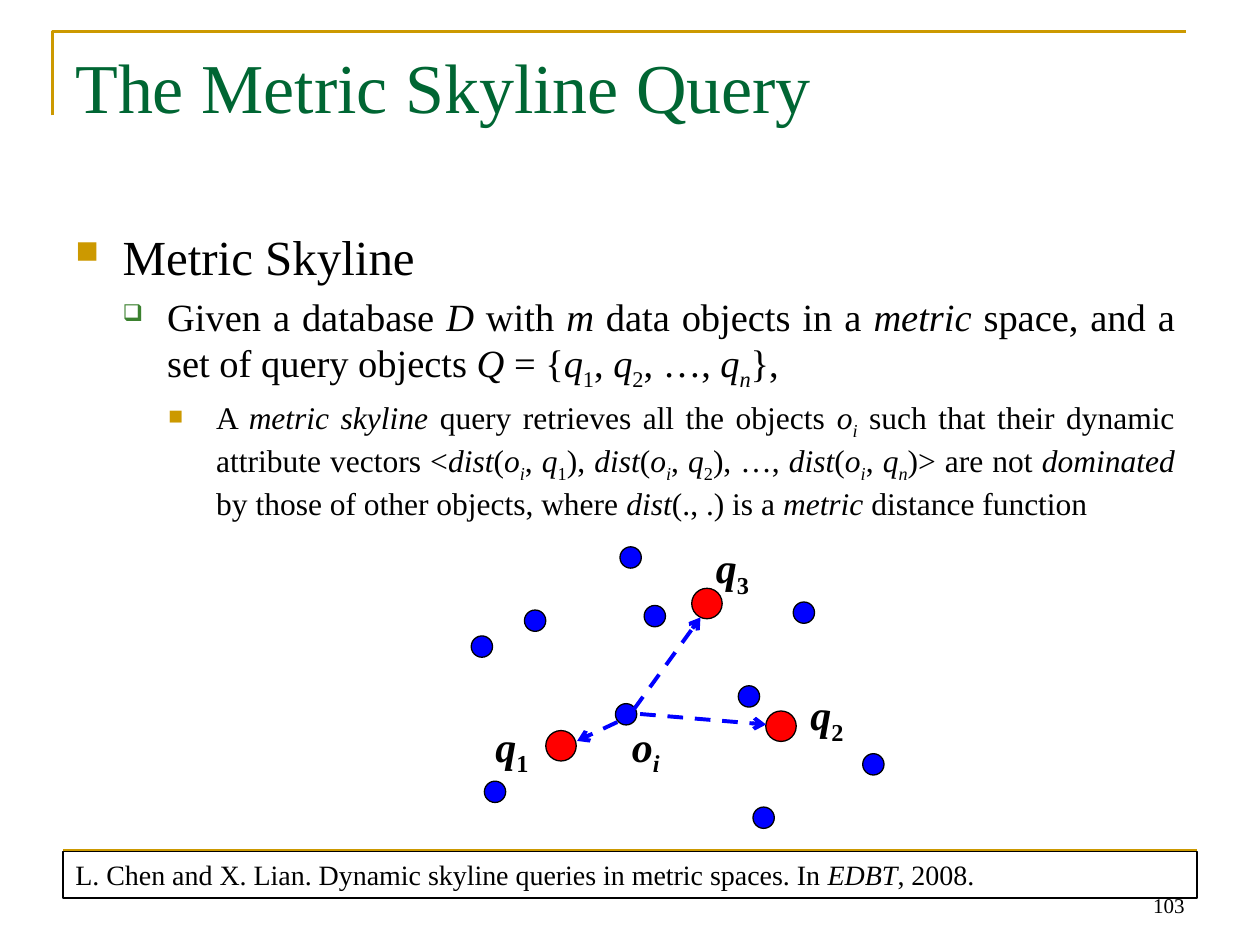
from lxml import etree
from pptx import Presentation
from pptx.dml.color import RGBColor
from pptx.enum.dml import MSO_LINE
from pptx.enum.shapes import MSO_CONNECTOR, MSO_SHAPE
from pptx.enum.text import MSO_ANCHOR, PP_ALIGN
from pptx.oxml.ns import qn
from pptx.util import Pt

FONT = "Times New Roman"
BLACK = RGBColor(0x00, 0x00, 0x00)
GOLD = RGBColor(0xCC, 0x99, 0x00)
TITLE_GREEN = RGBColor(0x00, 0x66, 0x33)
BULLET_GREEN = RGBColor(0x3B, 0x81, 0x2F)
BLUE = RGBColor(0x00, 0x00, 0xFF)
RED = RGBColor(0xFF, 0x00, 0x00)

# Body levels: size, left margin, indent, bullet, bullet colour, bullet size in percent
LEVELS = [
    (28, 27, -27, "■", GOLD, 65),
    (22, 52.5, -25.5, "❑", BULLET_GREEN, 60),
    (18, 80.5, -27.5, "■", GOLD, 65),
]
# In the wording, *...* is italic and _ lowers the next character
BODY = [
    "Metric Skyline",
    "Given a database *D* with *m* data objects in a *metric* space, and a set of "
    "query objects *Q* = {*q*_1, *q*_2, …, *q_n*}, ",
    "A *metric skyline *query retrieves all the objects *o_i* such that their dynamic "
    "attribute vectors <*dist*(*o_i*, *q*_1), *dist*(*o_i*, *q*_2), …, "
    "*dist*(*o_i*, *q_n*)> are not *dominated* by those of other objects, "
    "where *dist*(., .) is a *metric* distance function",
]
# Left and top of each point
DATA_DOTS = [
    (354.3, 312.5), (453.3, 344), (493, 430.7), (430.3, 461.2), (421.9, 391.9),
    (351.7, 402.1), (276.8, 446.4), (269.3, 363.4), (299.7, 348.6), (368.1, 346),
]
QUERY_DOTS = [(395.3, 336.2), (311.9, 417.5), (437.6, 406.3)]
# Wording, left, top, width
LABELS = [
    ("*q*_3", 402, 306, 34.5), ("*q*_2", 456, 390, 34.5),
    ("*q*_1", 276, 408, 34.5), ("*o_i*", 354, 408, 31),
]
# Start and tip of each arrow
ARROWS = [
    (362.2, 405.4, 400.3, 352.8),
    (352.8, 412.6, 329.8, 423.4),
    (365.8, 408, 437.8, 414),
]


def add_run(paragraph, text, italic, lowered=False):
    if not text:
        return
    run = paragraph.add_run()
    run.text = text
    if italic:
        run.font.italic = True
    if lowered:
        run.font._element.set("baseline", "-25000")


def write(paragraph, markup, size, color=BLACK, bold=None):
    for index, part in enumerate(markup.split("*")):
        italic = index % 2 == 1
        plain, *lowered_parts = part.split("_")
        add_run(paragraph, plain, italic)
        for lowered in lowered_parts:
            add_run(paragraph, lowered[0], italic, lowered=True)
            add_run(paragraph, lowered[1:], italic)
    font = paragraph.font
    font.name, font.size, font.bold = FONT, Pt(size), bold
    font.color.rgb = color


def add_text_box(slide, left, top, width, height, wrap=True):
    box = slide.shapes.add_textbox(Pt(left), Pt(top), Pt(width), Pt(height))
    box.text_frame.word_wrap = wrap
    return box.text_frame


def add_bullet(paragraph, character, color, percent):
    properties = paragraph._p.get_or_add_pPr()
    bullet_color = etree.SubElement(properties, qn("a:buClr"))
    etree.SubElement(bullet_color, qn("a:srgbClr"), val=str(color))
    etree.SubElement(properties, qn("a:buSzPct"), val=str(percent * 1000))
    etree.SubElement(properties, qn("a:buChar"), char=character)


def add_body(slide):
    frame = add_text_box(slide, 36, 126, 642.5, 356.5)
    for level, (markup, style) in enumerate(zip(BODY, LEVELS)):
        size, margin, indent, bullet, color, percent = style
        paragraph = frame.add_paragraph() if level else frame.paragraphs[0]
        paragraph.level = level
        paragraph.alignment = PP_ALIGN.JUSTIFY
        paragraph.space_before = Pt(size * 0.2)
        properties = paragraph._p.get_or_add_pPr()
        properties.set("marL", str(Pt(margin)))
        properties.set("indent", str(Pt(indent)))
        add_bullet(paragraph, bullet, color, percent)
        write(paragraph, markup, size)


def add_shape(slide, kind, left, top, width, height, fill=None):
    shape = slide.shapes.add_shape(kind, Pt(left), Pt(top), Pt(width), Pt(height))
    shape.shadow.inherit = False
    if fill is None:
        shape.fill.background()
    else:
        shape.fill.solid()
        shape.fill.fore_color.rgb = fill
    shape.line.color.rgb = BLACK
    shape.line.width = Pt(0.75)
    return shape


def add_line(slide, x1, y1, x2, y2, color, width):
    line = slide.shapes.add_connector(
        MSO_CONNECTOR.STRAIGHT, Pt(x1), Pt(y1), Pt(x2), Pt(y2))
    line.line.color.rgb = color
    line.line.width = Pt(width)
    etree.SubElement(line._element.spPr, qn("a:effectLst"))
    return line


def add_dashed_arrow(slide, x1, y1, x2, y2):
    arrow = add_line(slide, x1, y1, x2, y2, BLUE, 2.25)
    arrow.line.dash_style = MSO_LINE.DASH
    etree.SubElement(arrow.line._get_or_add_ln(), qn("a:tailEnd"), type="arrow")


def add_corner_rule(slide):
    builder = slide.shapes.build_freeform(Pt(30), Pt(66))
    builder.add_line_segments([(Pt(30), Pt(18)), (Pt(678), Pt(18))], close=False)
    corner = builder.convert_to_shape()
    corner.shadow.inherit = False
    corner.fill.background()
    corner.line.color.rgb = GOLD
    corner.line.width = Pt(1.5)


def add_citation(slide):
    box = add_shape(slide, MSO_SHAPE.RECTANGLE, 36, 486.6, 648, 26.6)
    frame = box.text_frame
    frame.word_wrap = True
    frame.vertical_anchor = MSO_ANCHOR.TOP
    paragraph = frame.paragraphs[0]
    paragraph.alignment = PP_ALIGN.LEFT
    write(paragraph, "L. Chen and X. Lian. Dynamic skyline queries in metric spaces. "
                     "In *EDBT*, 2008.", 16)


def main():
    presentation = Presentation()
    presentation.slide_width, presentation.slide_height = Pt(720), Pt(540)
    slide = presentation.slides.add_slide(presentation.slide_layouts[6])

    # Rules and slide number
    add_corner_rule(slide)
    add_line(slide, 36, 486, 684, 486, GOLD, 1.5)
    number = add_text_box(slide, 516, 492, 168, 36)
    number.vertical_anchor = MSO_ANCHOR.BOTTOM
    number.paragraphs[0].alignment = PP_ALIGN.RIGHT
    write(number.paragraphs[0], "103", 12)

    # Title and body
    title = add_text_box(slide, 36, 21.6, 648, 90)
    write(title.paragraphs[0], "The Metric Skyline Query", 40, TITLE_GREEN)
    add_body(slide)

    # Data objects, query objects and distances
    for dots, diameter, color in ((DATA_DOTS, 12.2, BLUE), (QUERY_DOTS, 17.4, RED)):
        for left, top in dots:
            add_shape(slide, MSO_SHAPE.OVAL, left, top, diameter, diameter, color)
    for markup, left, top, width in LABELS:
        label = add_text_box(slide, left, top, width, 36, wrap=False)
        write(label.paragraphs[0], markup, 24, bold=True)
    for arrow in ARROWS:
        add_dashed_arrow(slide, *arrow)

    # Reference
    add_citation(slide)
    presentation.save("out.pptx")


if __name__ == "__main__":
    main()
